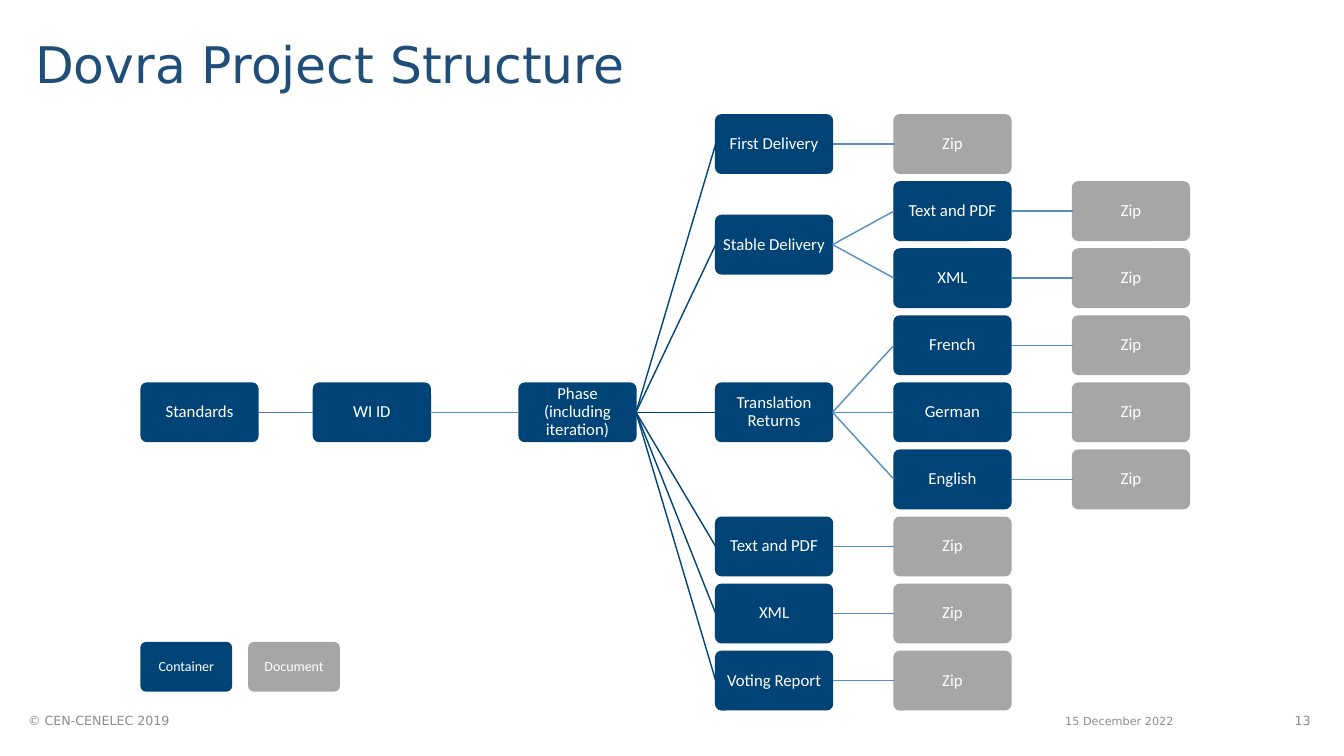
from dataclasses import dataclass

from lxml import etree
from pptx import Presentation
from pptx.dml.color import RGBColor as RGB
from pptx.enum.shapes import MSO_CONNECTOR as LINE, MSO_SHAPE as SHAPE
from pptx.enum.text import MSO_ANCHOR as ANCHOR, PP_ALIGN as ALIGN
from pptx.oxml.ns import qn
from pptx.util import Pt


@dataclass(frozen=True)
class Theme:
    head_font: str = "DejaVu Sans"
    node_font: str = "Calibri"
    title: str = "1F4E79"
    footer: str = "8C8C8C"
    container: str = "004377"
    document: str = "A6A6A6"
    node_text: str = "FFFFFF"
    # One line colour for each depth of the parent node
    links: tuple = ("497CAB", "538DC1", "004377", "538DC1", "538DC1")
    title_size: float = 36
    footer_size: float = 9
    date_size: float = 8
    node_size: float = 12
    legend_size: float = 10


@dataclass(frozen=True)
class Box:
    left: float
    top: float
    width: float
    height: float

    def lengths(self):
        return [Pt(v) for v in (self.left, self.top, self.width, self.height)]


THEME = Theme()
SLIDE = Box(0, 0, 960, 540)
NODE_W, NODE_H = 83.5, 41.75
COLUMNS = (0, 123.1, 270, 410.4, 537.8, 665.3)
RIGHT_SITE, LEFT_SITE = 3, 1

ZIP = ("Zip", [])
DELIVERABLES = [
    ("First Delivery", [ZIP]),
    ("Stable Delivery", [("Text and PDF", [ZIP]), ("XML", [ZIP])]),
    ("Translation Returns",
     [(language, [ZIP]) for language in ("French", "German", "English")]),
    ("Text and PDF", [ZIP]),
    ("XML", [ZIP]),
    ("Voting Report", [ZIP]),
]
PROJECT = ("Standards",
           [("WI ID", [("Phase (including iteration)", DELIVERABLES)])])


def write(tf, text, font, size, color, align, inset=None, spacing=1.0):
    frame = {"word_wrap": True, "vertical_anchor": ANCHOR.MIDDLE}
    if inset is not None:
        sides = ("left", "right", "top", "bottom")
        frame.update({f"margin_{side}": Pt(inset) for side in sides})
    for name, value in frame.items():
        setattr(tf, name, value)
    p = tf.paragraphs[0]
    p.alignment, p.line_spacing = align, spacing
    r = p.add_run()
    r.text = text
    for name, value in {"name": font, "size": Pt(size), "bold": False}.items():
        setattr(r.font, name, value)
    r.font.color.rgb = RGB.from_string(color)


def add_label(slide, box, text, size, color, align=ALIGN.LEFT, spacing=1.0):
    tf = slide.shapes.add_textbox(*box.lengths()).text_frame
    write(tf, text, THEME.head_font, size, color, align, spacing=spacing)


def add_node(slide, box, text, color, size):
    sp = slide.shapes.add_shape(SHAPE.ROUNDED_RECTANGLE, *box.lengths())
    sp.shadow.inherit = False
    sp.adjustments[0] = 0.1
    sp.fill.solid()
    sp.fill.fore_color.rgb = sp.line.color.rgb = RGB.from_string(color)
    sp.line.width = Pt(1)
    write(sp.text_frame, text, THEME.node_font, size, THEME.node_text,
          ALIGN.CENTER, inset=2, spacing=0.9)
    return sp


def add_link(slide, parent, child, color):
    link = slide.shapes.add_connector(LINE.STRAIGHT, 0, 0, 0, 0)
    link.begin_connect(parent, RIGHT_SITE)
    link.end_connect(child, LEFT_SITE)
    link.line.color.rgb = RGB.from_string(color)
    link.line.width = Pt(1)
    etree.SubElement(link.element.spPr, qn("a:effectLst"))


def count_leaves(node):
    return sum(map(count_leaves, node[1])) or 1


def add_tree(slide, box, root):
    """Give each leaf a row and centre each parent on its outer children."""
    pitch = (box.height - NODE_H) / (count_leaves(root) - 1)
    rows = iter(range(count_leaves(root)))

    def place(node, depth):
        text, children = node
        placed = [place(child, depth + 1) for child in children]
        if placed:
            row = (placed[0][1] + placed[-1][1]) / 2
            color = THEME.container
        else:
            row, color = next(rows), THEME.document
        spot = Box(box.left + COLUMNS[depth], box.top + row * pitch,
                   NODE_W, NODE_H)
        sp = add_node(slide, spot, text, color, THEME.node_size)
        for child, _ in placed:
            add_link(slide, sp, child, THEME.links[depth])
        return sp, row

    place(root, 0)


def add_legend(slide, box):
    entries = (("Container", THEME.container), ("Document", THEME.document))
    width, gap = 64.5, box.width - 2 * 64.5
    for i, (text, color) in enumerate(entries):
        spot = Box(box.left + i * (width + gap), box.top, width, box.height)
        add_node(slide, spot, text, color, THEME.legend_size)


def add_footer(slide, box):
    parts = (
        (0, 216, "© CEN-CENELEC 2019", THEME.footer_size, ALIGN.LEFT),
        (740.8, 106.6, "15 December 2022", THEME.date_size, ALIGN.LEFT),
        (box.width - 50.4, 50.4, "13", THEME.footer_size, ALIGN.RIGHT),
    )
    for offset, width, text, size, align in parts:
        spot = Box(box.left + offset, box.top, width, box.height)
        add_label(slide, spot, text, size, THEME.footer, align)


def add_structure_slide(prs, box):
    slide = prs.slides.add_slide(prs.slide_layouts[6])
    add_label(slide, Box(box.left + 18, box.top + 26, 720, 44),
              "Dovra Project Structure", THEME.title_size, THEME.title,
              spacing=0.9)
    add_tree(slide, Box(box.left + 100.8, box.top + 82, 748.8, 425), PROJECT)
    add_legend(slide, Box(box.left + 100.8, box.top + 459, 141.5, 34.5))
    add_footer(slide, Box(box.left + 13, box.top + 500.4, 930.2, 28.8))


def main():
    prs = Presentation()
    prs.slide_width, prs.slide_height = Pt(SLIDE.width), Pt(SLIDE.height)
    add_structure_slide(prs, SLIDE)
    prs.save("out.pptx")


if __name__ == "__main__":
    main()
